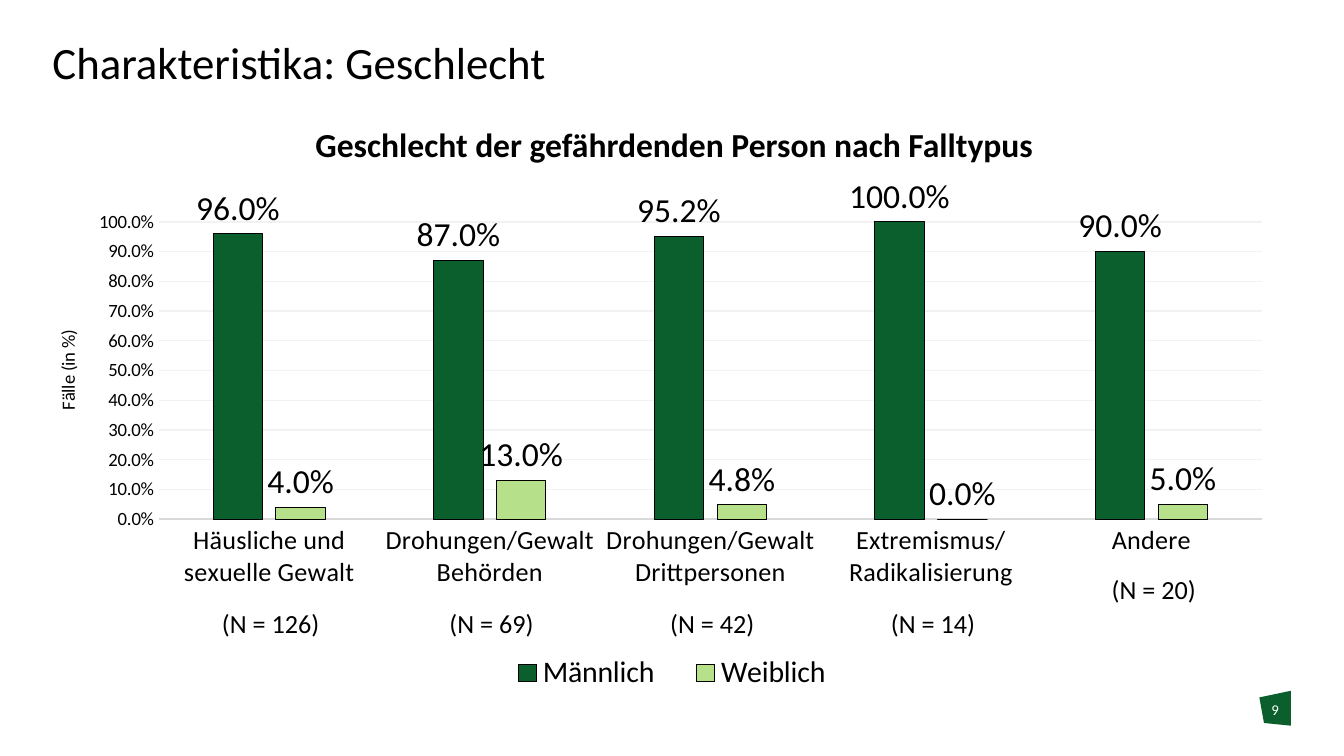
from dataclasses import dataclass

from pptx import Presentation
from pptx import util as u
from pptx.chart.data import CategoryChartData
from pptx.dml.color import RGBColor
from pptx.enum import chart as ch
from pptx.enum import shapes, text
from pptx.oxml import parse_xml
from pptx.oxml.ns import nsdecls, qn

PX = 4572


@dataclass(frozen=True)
class Theme:
    """Hold the colours and type sizes."""
    font: str = "Calibri"
    ink: str = "000000"
    paper: str = "FFFFFF"
    dark: str = "0A5F2D"
    light: str = "B6E089"
    grid: str = "F2F2F2"
    axis: str = "D9D9D9"
    title: int = 24
    head: int = 18
    key: int = 16
    body: int = 14
    tick: int = 10
    page: int = 8


T = Theme()
CATS = ["Häusliche und sexuelle Gewalt", "Drohungen/Gewalt Behörden",
        "Drohungen/Gewalt Drittpersonen", "Extremismus/ Radikalisierung", "Andere"]
ROWS = [("Männlich", T.dark, (0.96, 0.87, 0.952, 1, 0.9)),
        ("Weiblich", T.light, (0.04, 0.13, 0.048, 0, 0.05))]
COUNTS = [126, 69, 42, 14, 20]


def px(*vals):
    """Turn px into EMU."""
    return [u.Emu(round(v * PX)) for v in vals]


def style(font, size, color=T.ink, bold=False):
    """Format a font."""
    font.name, font.size, font.bold = T.font, u.Pt(size), bold
    font.color.rgb = RGBColor.from_string(color)


def paint(fill, color):
    """Apply a solid fill."""
    fill.solid()
    fill.fore_color.rgb = RGBColor.from_string(color)


def stroke(line, color, width):
    """Apply a solid line."""
    paint(line.fill, color)
    line.width = u.Pt(width)


def write(shape, words, size, color=T.ink, bold=False, align=text.PP_ALIGN.CENTER, inset=0):
    """Put one formatted paragraph into a shape."""
    frame = shape.text_frame
    frame.text, frame.word_wrap = words, True
    frame.margin_left = frame.margin_right = frame.margin_top = frame.margin_bottom = px(inset)[0]
    para = frame.paragraphs[0]
    para.alignment = align
    style(para.runs[0].font, size, color, bold)
    return frame


def place(node, index, inner=False, **parts):
    """Give a chart part a manual layout."""
    for old in node.findall(qn("c:layout")):
        node.remove(old)
    rows = '<c:layoutTarget val="inner"/>' if inner else ""
    rows += "".join(f'<c:{k}Mode val="edge"/>' for k in "xy")
    rows += "".join(f'<c:{k} val="{v}"/>' for k, v in parts.items())
    node.insert(index, parse_xml(
        f'<c:layout {nsdecls("c")}><c:manualLayout>{rows}</c:manualLayout></c:layout>'))


def add_title(slide, box):
    """Place the slide title."""
    shape = slide.shapes.title
    shape.left, shape.top, shape.width, shape.height = px(*box)
    frame = write(shape, "Charakteristika: Geschlecht", T.title, align=text.PP_ALIGN.LEFT)
    frame.vertical_anchor = text.MSO_ANCHOR.BOTTOM
    frame.auto_size = text.MSO_AUTO_SIZE.NONE
    frame.paragraphs[0].line_spacing = 0.9


def add_badge(slide, box):
    """Draw the page number on its slanted tile."""
    x, y, w, h = box
    build = slide.shapes.build_freeform(x, y + 10, scale=PX)
    build.add_line_segments([(x + w, y), (x + w, y + h), (x + 7, y + h - 4)], close=True)
    tile = build.convert_to_shape()
    tile.shadow.inherit = False
    paint(tile.fill, T.dark)
    tile.line.fill.background()
    write(slide.shapes.add_textbox(*px(x, y + 14, w, h + 8)), "9", T.page, T.paper)


def add_head(slide, box):
    """Place the chart heading."""
    shape = slide.shapes.add_shape(shapes.MSO_SHAPE.RECTANGLE, *px(*box))
    shape.shadow.inherit = False
    paint(shape.fill, T.paper)
    shape.line.fill.background()
    frame = write(shape, "Geschlecht der gefährdenden Person nach Falltypus", T.head, bold=True)
    frame.vertical_anchor = text.MSO_ANCHOR.MIDDLE


def dress_axes(chart):
    """Format both axes."""
    cat, val = chart.category_axis, chart.value_axis
    for axis, size in ((cat, T.body), (val, T.tick)):
        axis.major_tick_mark = axis.minor_tick_mark = ch.XL_TICK_MARK.NONE
        style(axis.tick_labels.font, size)
    stroke(cat.format.line, T.axis, 0.75)
    val.format.line.fill.background()
    stroke(val.major_gridlines.format.line, T.grid, 0.75)
    val.minimum_scale, val.maximum_scale, val.major_unit = 0, 1, 0.1
    val.tick_labels.number_format = "0.0%"
    val.tick_labels.number_format_is_linked = False
    frame = val.axis_title.text_frame
    frame.text = "Fälle (in %)"
    style(frame.paragraphs[0].runs[0].font, T.tick)
    place(val.axis_title._element, 1, x=0, y=0.31)


def dress_key(chart):
    """Format the legend."""
    chart.has_legend = True
    key = chart.legend
    key.position = ch.XL_LEGEND_POSITION.BOTTOM
    key.include_in_layout = False
    style(key.font, T.key)
    place(key._element, 1, x=0.35, y=0.91, w=0.3, h=0.08)


def add_chart(slide, box):
    """Build the column chart."""
    data = CategoryChartData(number_format="0.0%")
    data.categories = CATS
    for name, _, vals in ROWS:
        data.add_series(name, vals)
    chart = slide.shapes.add_chart(ch.XL_CHART_TYPE.COLUMN_CLUSTERED, *px(*box), data).chart
    style(chart.font, T.tick)
    chart.has_title = False
    plot = chart.plots[0]
    plot.gap_width, plot.overlap, plot.vary_by_categories = 219, -27, False
    for bars, (_, color, _) in zip(plot.series, ROWS):
        paint(bars.format.fill, color)
        stroke(bars.format.line, T.ink, 0.5)
        bars.invert_if_negative = False
        tags = bars.data_labels
        tags.show_value = True
        tags.position = ch.XL_LABEL_POSITION.OUTSIDE_END
        tags.number_format, tags.number_format_is_linked = "0.0%", False
        style(tags.font, T.head)
    dress_axes(chart)
    dress_key(chart)
    area = chart._chartSpace.find(".//" + qn("c:plotArea"))
    place(area, 0, True, x=0.086, y=0.117, w=0.89, h=0.549)


def add_counts(slide, box):
    """Write the case count below each category."""
    x, y, w, h = box
    step = 328.5
    for i, (cat, count) in enumerate(zip(CATS, COUNTS)):
        rise = 0 if " " in cat else 50
        shape = slide.shapes.add_textbox(*px(x + i * step, y - rise, w, h))
        write(shape, f"(N = {count})", T.body, inset=10)


def main():
    """Build and save the slide."""
    deck = Presentation()
    deck.slide_width, deck.slide_height = px(2000, 1125)
    slide = deck.slides.add_slide(deck.slide_layouts[5])
    add_title(slide, (78, 0, 1844, 133))
    add_badge(slide, (1874, 1028, 47, 52))
    add_chart(slide, (78, 236, 1844, 806))
    add_head(slide, (78, 193, 1852, 44))
    add_counts(slide, (250, 894, 306, 68))
    deck.save("out.pptx")


if __name__ == "__main__":
    main()
